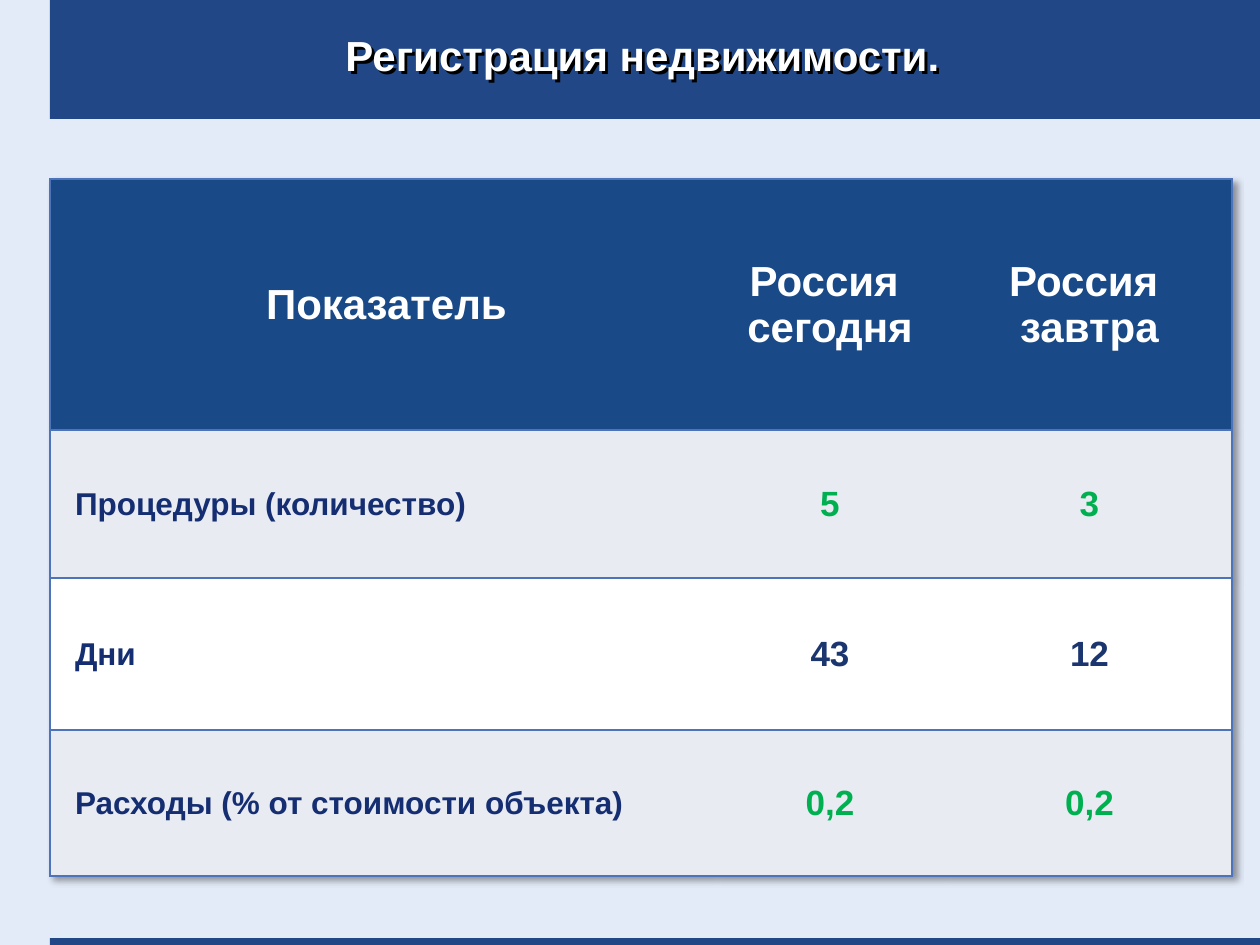
"""Build the property registration slide with its table of indicators."""
from dataclasses import dataclass

from lxml.etree import SubElement
from pptx import Presentation
from pptx.dml.color import RGBColor
from pptx.enum.shapes import MSO_SHAPE as Shape
from pptx.enum.text import MSO_ANCHOR as Anchor, PP_ALIGN as Align
from pptx.oxml import parse_xml
from pptx.oxml.ns import nsdecls, qn
from pptx.util import Pt

EMU_PER_PX = 914400 / 126


@dataclass(frozen=True)
class Theme:
    font: str = "Arial"
    background: str = "E3EBF8"
    band: str = "214786"
    header: str = "194986"
    shaded: str = "E9EBF3"
    white: str = "FFFFFF"
    border: str = "4D74BB"
    label: str = "142E71"
    value: str = "1B356F"
    good: str = "00B050"
    heading_size: int = 24
    label_size: int = 18
    value_size: int = 20


@dataclass(frozen=True)
class Box:
    left: int
    top: int
    width: int
    height: int

    def emu(self) -> tuple:
        return px(self.left), px(self.top), px(self.width), px(self.height)


@dataclass(frozen=True)
class Style:
    size: int
    color: str
    align: Align = Align.CENTER
    indent: int = 0


@dataclass(frozen=True)
class Indicator:
    name: str
    today: str
    tomorrow: str
    height: int
    fill: str
    value_color: str


THEME = Theme()
BANDS = (Box(50, 0, 1210, 119), Box(50, 938, 1210, 7))
TITLE_BOX = Box(50, 0, 1160, 119)
TABLE_BOX = Box(50, 179, 1182, 697)
COLUMN_WIDTHS = (663, 234, 285)
HEADER_HEIGHT = 251
HEADERS = (("Показатель",), ("Россия ", "сегодня"), ("Россия ", "завтра"))
INDICATORS = (
    Indicator("Процедуры (количество)", "5", "3", 148, THEME.shaded, THEME.good),
    Indicator("Дни", "43", "12", 152, THEME.white, THEME.value),
    Indicator("Расходы (% от стоимости объекта)", "0,2", "0,2", 146, THEME.shaded, THEME.good),
)
HEADING = Style(THEME.heading_size, THEME.white)
FIRST_HEADING = Style(THEME.heading_size, THEME.white, indent=10)
LABEL = Style(THEME.label_size, THEME.label, Align.LEFT, 24)


def px(length: float) -> int:
    return round(length * EMU_PER_PX)


def paint(fill, color: str) -> None:
    fill.solid()
    fill.fore_color.rgb = RGBColor.from_string(color)


def add_shadow(effects, distance: int, blur: int, opacity: int) -> None:
    effects.append(parse_xml(
        f'<a:outerShdw {nsdecls("a")} blurRad="{px(blur)}" dist="{px(distance)}" '
        f'dir="2700000" algn="tl" rotWithShape="0"><a:srgbClr val="000000">'
        f'<a:alpha val="{opacity * 1000}"/></a:srgbClr></a:outerShdw>'))


def write_lines(frame, lines: tuple, style: Style) -> None:
    for index, line in enumerate(lines):
        paragraph = frame.add_paragraph() if index else frame.paragraphs[0]
        paragraph.alignment = style.align
        paragraph._p.get_or_add_pPr().set("marL", str(px(style.indent)))
        run = paragraph.add_run()
        run.text = line
        run.font.name = THEME.font
        run.font.size = Pt(style.size)
        run.font.bold = True
        run.font.color.rgb = RGBColor.from_string(style.color)


def set_borders(cell, visible: str) -> None:
    properties = cell._tc.get_or_add_tcPr()
    for side in "LRTB":
        line = SubElement(properties, qn(f"a:ln{side}"), w=str(Pt(1)))
        if side in visible:
            solid = SubElement(line, qn("a:solidFill"))
            SubElement(solid, qn("a:srgbClr"), val=THEME.border)
        else:
            SubElement(line, qn("a:noFill"))


def fill_cell(cell, lines: tuple, style: Style, fill: str, borders: str) -> None:
    cell.margin_left = cell.margin_right = cell.margin_top = px(1)
    cell.margin_bottom = 0
    cell.vertical_anchor = Anchor.MIDDLE
    set_borders(cell, borders)
    paint(cell.fill, fill)
    write_lines(cell.text_frame, lines, style)


def add_band(slide, box: Box) -> None:
    shape = slide.shapes.add_shape(Shape.RECTANGLE, *box.emu())
    shape.shadow.inherit = False
    paint(shape.fill, THEME.band)
    shape.line.fill.background()


def add_title(slide) -> None:
    shape = slide.shapes.add_textbox(*TITLE_BOX.emu())
    frame = shape.text_frame
    frame.word_wrap = True
    frame.vertical_anchor = Anchor.MIDDLE
    frame.margin_left = px(25)
    frame.margin_right = frame.margin_top = frame.margin_bottom = 0
    write_lines(frame, ("Регистрация недвижимости.",), HEADING)
    frame.paragraphs[0].line_spacing = 0.8
    shape.shadow.inherit = False
    add_shadow(shape._element.spPr.find(qn("a:effectLst")), distance=4, blur=0, opacity=100)


def add_indicator_table(slide) -> None:
    table = slide.shapes.add_table(
        len(INDICATORS) + 1, len(COLUMN_WIDTHS), *TABLE_BOX.emu()).table
    table.first_row = table.horz_banding = False
    effects = parse_xml(f'<a:effectLst {nsdecls("a")}/>')
    add_shadow(effects, distance=6, blur=6, opacity=40)
    table._tbl.tblPr.insert(0, effects)
    for column, width in zip(table.columns, COLUMN_WIDTHS):
        column.width = px(width)
    heights = (HEADER_HEIGHT, *(item.height for item in INDICATORS))
    for row, height in zip(table.rows, heights):
        row.height = px(height)
    borders = ("LTB", "TB", "RTB")
    for column, lines in enumerate(HEADERS):
        style = HEADING if column else FIRST_HEADING
        fill_cell(table.cell(0, column), lines, style, THEME.header, borders[column])
    for row, item in enumerate(INDICATORS, 1):
        value = Style(THEME.value_size, item.value_color)
        entries = ((item.name, LABEL), (item.today, value), (item.tomorrow, value))
        for column, (text, style) in enumerate(entries):
            fill_cell(table.cell(row, column), (text,), style, item.fill, borders[column])


def main() -> None:
    presentation = Presentation()
    presentation.slide_width, presentation.slide_height = px(1260), px(945)
    slide = presentation.slides.add_slide(presentation.slide_layouts[6])
    paint(slide.background.fill, THEME.background)
    for band in BANDS:
        add_band(slide, band)
    add_indicator_table(slide)
    add_title(slide)
    presentation.save("out.pptx")


if __name__ == "__main__":
    main()
